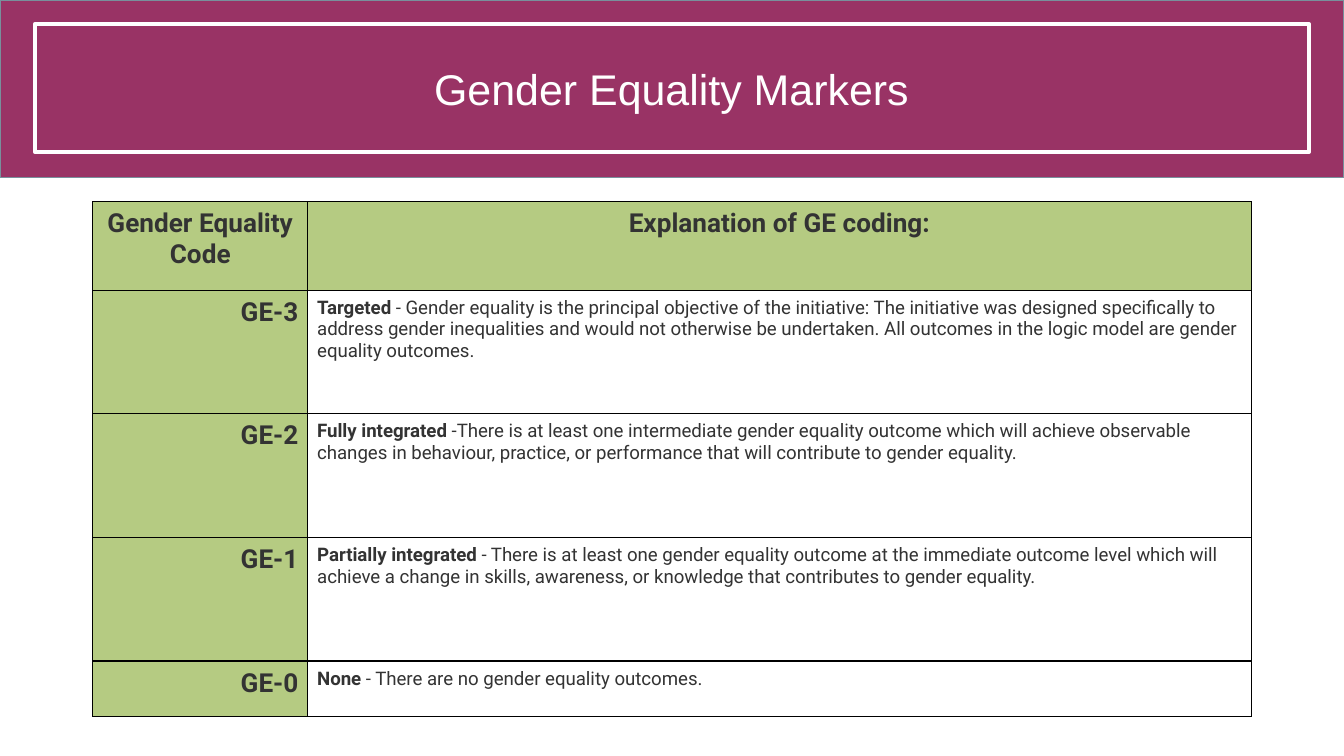
from dataclasses import dataclass

from lxml.etree import SubElement as Sub
from pptx import Presentation
from pptx.dml.color import RGBColor as RGB
from pptx.enum.shapes import MSO_SHAPE as Shape
from pptx.enum.text import MSO_ANCHOR as Anchor, MSO_AUTO_SIZE as Auto, PP_ALIGN as Align
from pptx.oxml.ns import qn
from pptx.util import Inches, Pt

HUES = {
    "band": "993365", "edge": "78909C", "code": "B5CB82",
    "ink": "333333", "rule": "000000", "white": "FFFFFF",
}
WIDE = 10
HIGH = WIDE * 9 / 16
COLS = [1.6, 7.02]
HEADS = ["Gender Equality Code", "Explanation of GE coding:"]
HEAD_H = 0.66


@dataclass
class Level:
    code: str
    name: str
    text: str
    high: float = 0.92


LEVELS = [
    Level("GE-3", "Targeted",
          " - Gender equality is the principal objective of the initiative: "
          "The initiative was designed specifically to address gender inequalities "
          "and would not otherwise be undertaken. All outcomes in the logic model "
          "are gender equality outcomes."),
    Level("GE-2", "Fully integrated",
          " -There is at least one intermediate gender equality outcome which will "
          "achieve observable changes in behaviour, practice, or performance that "
          "will contribute to gender equality."),
    Level("GE-1", "Partially integrated",
          " - There is at least one gender equality outcome at the immediate outcome "
          "level which will achieve a change in skills, awareness, or knowledge that "
          "contributes to gender equality."),
    Level("GE-0", "None ", "- There are no gender equality outcomes.", 0.41),
]


def hue(name: str) -> RGB:
    return RGB.from_string(HUES[name])


def write(frame, text: str, size=14, font="Roboto", color="ink", bold=True,
          align=Align.LEFT) -> None:
    """Add a run to the frame's first paragraph."""
    para = frame.paragraphs[0]
    para.alignment = align
    run = para.add_run()
    run.text = text
    run.font.size, run.font.name, run.font.bold = Pt(size), font, bold
    run.font.color.rgb = hue(color)


def style(cell, fill: str | None = None) -> None:
    """Set the margins, borders and fill of a cell."""
    cell.margin_left = cell.margin_right = Inches(0.07)
    cell.margin_top = cell.margin_bottom = Inches(0.05)
    props = cell._tc.get_or_add_tcPr()
    for side in ("lnL", "lnR", "lnT", "lnB"):
        line = Sub(props, qn(f"a:{side}"), w=str(Pt(0.75)))
        solid = Sub(line, qn("a:solidFill"))
        Sub(solid, qn("a:srgbClr"), val=HUES["rule"])
    if fill:
        cell.fill.solid()
        cell.fill.fore_color.rgb = hue(fill)
    else:
        cell.fill.background()


def add_title(slide) -> None:
    """Frame the title in white on a full-width band."""
    title = slide.shapes.title
    title.left, title.top = Inches(0.26), Inches(0.18)
    title.width, title.height = Inches(9.48), Inches(0.95)
    title.line.color.rgb = hue("white")
    title.line.width = Pt(2.25)
    frame = title.text_frame
    frame.auto_size, frame.word_wrap = Auto.NONE, True
    frame.vertical_anchor = Anchor.MIDDLE
    write(frame, "Gender Equality Markers", size=23, font="Arial",
          color="white", bold=False, align=Align.CENTER)

    band = slide.shapes.add_shape(Shape.RECTANGLE, 0, 0, Inches(WIDE), Inches(1.32))
    band.shadow.inherit = False
    band.fill.solid()
    band.fill.fore_color.rgb = hue("band")
    band.line.color.rgb = hue("edge")
    band.line.width = Pt(0.75)
    title.element.addprevious(band.element)


def add_grid(slide) -> None:
    highs = [HEAD_H] + [level.high for level in LEVELS]
    grid = slide.shapes.add_table(
        len(highs), len(COLS), Inches(0.69), Inches(1.5),
        Inches(sum(COLS)), Inches(sum(highs))).table
    grid.first_row = grid.horz_banding = False
    for col, wide in zip(grid.columns, COLS):
        col.width = Inches(wide)
    for row, high in zip(grid.rows, highs):
        row.height = Inches(high)

    for col, head in enumerate(HEADS):
        cell = grid.cell(0, col)
        style(cell, "code")
        write(cell.text_frame, head, align=Align.CENTER)
    for row, level in enumerate(LEVELS, 1):
        code, note = grid.cell(row, 0), grid.cell(row, 1)
        style(code, "code")
        write(code.text_frame, level.code, align=Align.RIGHT)
        style(note)
        write(note.text_frame, level.name, size=10)
        write(note.text_frame, level.text, size=10, bold=False)


def main() -> None:
    deck = Presentation()
    deck.slide_width, deck.slide_height = Inches(WIDE), Inches(HIGH)
    slide = deck.slides.add_slide(deck.slide_layouts[5])
    add_grid(slide)
    add_title(slide)
    deck.save("out.pptx")


if __name__ == "__main__":
    main()
